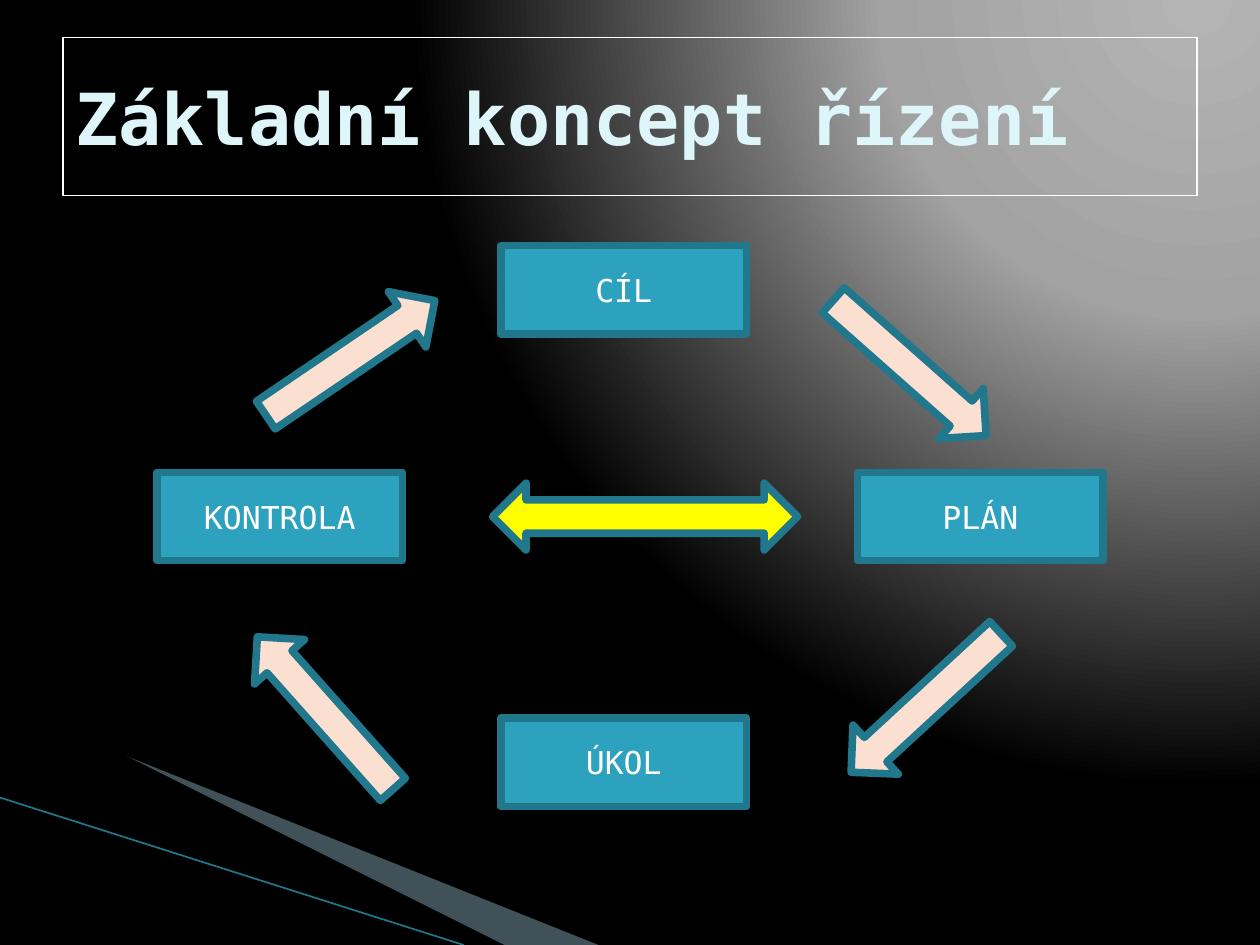
from lxml.etree import SubElement
from pptx import Presentation
from pptx.dml.color import RGBColor
from pptx.enum.shapes import MSO_CONNECTOR, MSO_SHAPE
from pptx.enum.text import MSO_ANCHOR, PP_ALIGN
from pptx.oxml import parse_xml
from pptx.oxml.ns import nsdecls, qn
from pptx.util import Inches, Pt

# Content
TITLE = "Základní koncept řízení"
BOXES = [("CÍL", 1, 0), ("ÚKOL", 1, 2), ("PLÁN", 2, 1), ("KONTROLA", 0, 1)]
CYCLE = [  # centre x, centre y, rotation
    (7.22, 2.92, 311.5),
    (7.35, 5.58, 47.3),
    (2.58, 5.66, 138.4),
    (2.78, 2.84, 235.9),
]
WEDGES = [  # points, fill, opacity in percent
    ([(0.55, 6.5), (5.95, 7.5), (4.56, 7.5)], "A0CBDC", 40),
    ([(0.53, 6.49), (4.57, 7.5), (3.72, 7.5)], "000000", 100),
]
GRADIENT = [(0, "B4B4B4"), (40, "A2A2A2"), (100, "000000")]
FOCUS = {"l": 95, "t": -106, "r": 5, "b": 206}

# Grid and formats
WIDTH, HEIGHT = 10, 7.5
COLUMNS, ROWS = (2.22, 4.95, 7.78), (2.3, 4.1, 6.05)
BOX_SIZE, ARROW_SIZE = (1.95, 0.7), (0.53, 1.62)
EDGE, EDGE_WIDTH = "21788D", 4.33
TITLE_FONT = {"name": "DejaVu Sans Mono", "size": Pt(41), "bold": True}
BOX_FONT = {"name": "DejaVu Sans Mono", "size": Pt(18)}


def colour(value):
    return RGBColor.from_string(value)


def paint_background(page):
    stops = "".join(
        f'<a:gs pos="{pos * 1000}"><a:srgbClr val="{value}"/></a:gs>'
        for pos, value in GRADIENT
    )
    focus = " ".join(f'{side}="{share * 1000}"' for side, share in FOCUS.items())
    gradient = parse_xml(
        f'<a:gradFill {nsdecls("a")} rotWithShape="1"><a:gsLst>{stops}</a:gsLst>'
        f'<a:path path="circle"><a:fillToRect {focus}/></a:path></a:gradFill>'
    )
    fill = page.background.fill
    fill.solid()
    solid = page.element.find(".//" + qn("p:bgPr")).find(qn("a:solidFill"))
    solid.getparent().replace(solid, gradient)


def add_wedge(page, points, fill, opacity):
    start, *others = points
    builder = page.shapes.build_freeform(*start, scale=Inches(1))
    builder.add_line_segments(others, close=True)
    wedge = builder.convert_to_shape()
    wedge.shadow.inherit = False
    wedge.fill.solid()
    wedge.fill.fore_color.rgb = colour(fill)
    wedge.line.fill.background()
    if opacity < 100:
        value = wedge.fill._xPr.find(".//" + qn("a:srgbClr"))
        SubElement(value, qn("a:alpha"), val=str(opacity * 1000))


def add_centred(page, kind, centre, size, fill):
    left, top = (middle - length / 2 for middle, length in zip(centre, size))
    shape = page.shapes.add_shape(kind, *map(Inches, (left, top, *size)))
    shape.shadow.inherit = False
    shape.fill.solid()
    shape.fill.fore_color.rgb = colour(fill)
    shape.line.color.rgb = colour(EDGE)
    shape.line.width = Pt(EDGE_WIDTH)
    SubElement(shape.line._get_or_add_ln(), qn("a:round"))
    return shape


def write(shape, text, font, text_colour, alignment):
    frame = shape.text_frame
    frame.word_wrap = True
    frame.vertical_anchor = MSO_ANCHOR.MIDDLE
    para = frame.paragraphs[0]
    para.alignment = alignment
    span = para.add_run()
    span.text = text
    for name, value in font.items():
        setattr(span.font, name, value)
    span.font.color.rgb = colour(text_colour)


def main():
    deck = Presentation()
    deck.slide_width, deck.slide_height = Inches(WIDTH), Inches(HEIGHT)
    page = deck.slides.add_slide(deck.slide_layouts[6])

    # Backdrop with the corner decoration
    paint_background(page)
    for wedge in WEDGES:
        add_wedge(page, *wedge)
    stripe = page.shapes.add_connector(
        MSO_CONNECTOR.STRAIGHT, *map(Inches, (0, 6.33, 3.68, HEIGHT))
    )
    stripe.line.color.rgb = colour(EDGE)
    stripe.line.width = Pt(0.95)
    SubElement(stripe._element.spPr, qn("a:effectLst"))

    # Title
    title = page.shapes.add_textbox(*map(Inches, (0.5, 0.3, WIDTH - 1, 1.25)))
    title.line.color.rgb = colour("FFFFFF")
    title.line.width = Pt(0.75)
    write(title, TITLE, TITLE_FONT, "DEF5FA", PP_ALIGN.LEFT)

    # Stages of the cycle
    for text, column, row in BOXES:
        centre = COLUMNS[column], ROWS[row]
        box = add_centred(page, MSO_SHAPE.RECTANGLE, centre, BOX_SIZE, "2DA2BF")
        write(box, text, BOX_FONT, "FFFFFF", PP_ALIGN.CENTER)

    # Arrows between the stages
    add_centred(page, MSO_SHAPE.LEFT_RIGHT_ARROW, (5.12, ROWS[1]), (2.42, 0.53), "FFFF00")
    for x, y, rotation in CYCLE:
        arrow = add_centred(page, MSO_SHAPE.DOWN_ARROW, (x, y), ARROW_SIZE, "FBE0D1")
        arrow.rotation = rotation

    deck.save("out.pptx")


if __name__ == "__main__":
    main()
